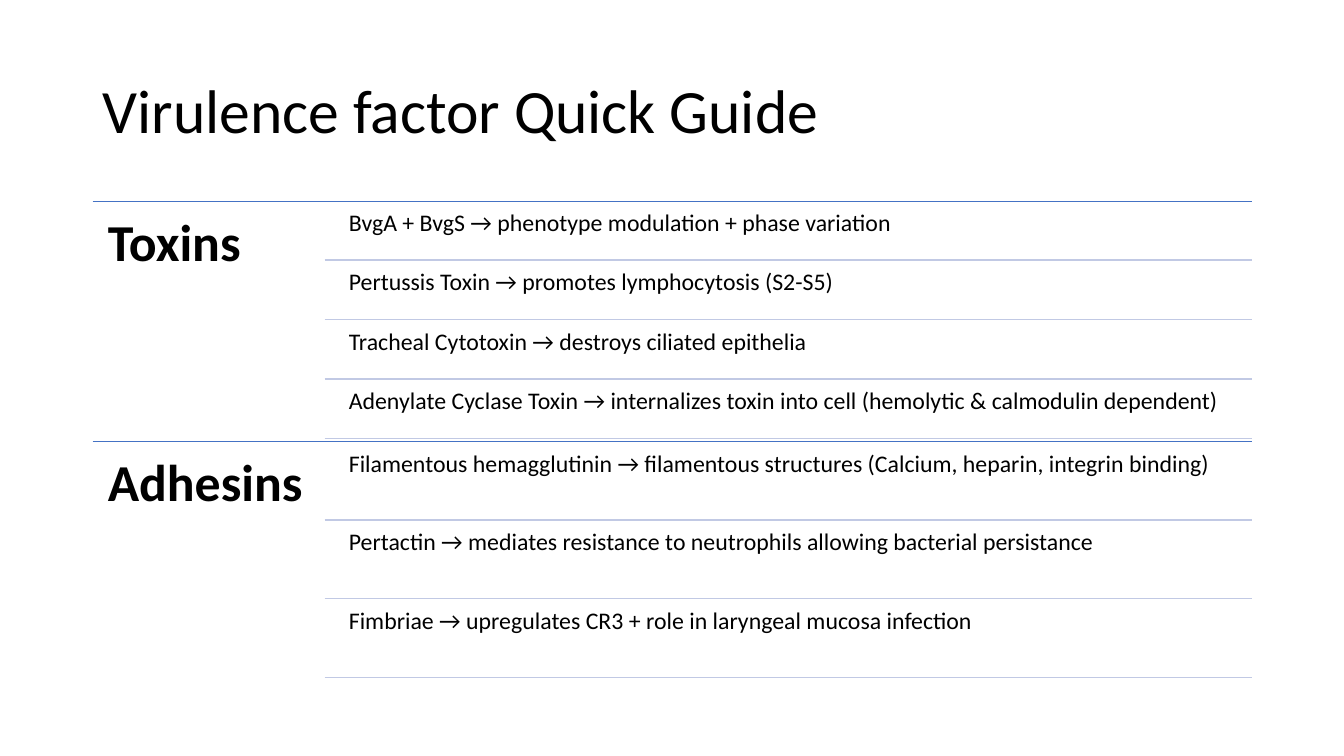
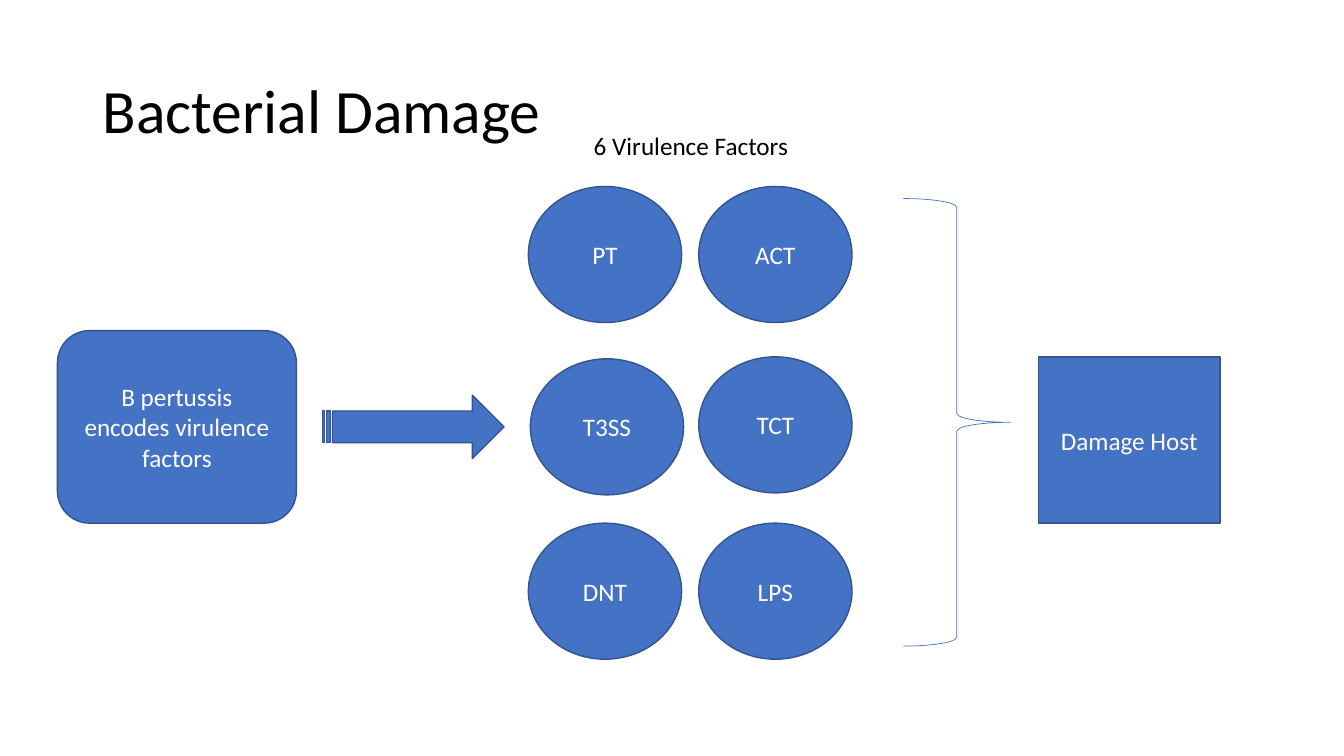
"""Build two slides on the virulence factors of B pertussis."""
from lxml.etree import SubElement
from pptx import Presentation
from pptx.dml.color import RGBColor
from pptx.enum.shapes import MSO_CONNECTOR, MSO_SHAPE as Kind
from pptx.enum.text import MSO_ANCHOR as Anchor, PP_ALIGN as Align
from pptx.oxml.ns import qn
from pptx.util import Inches, Pt

FONT = "Calibri"
BLACK, WHITE = "000000", "FFFFFF"
BLUE, EDGE, PALE = "4472C4", "325491", "C1C9E4"
LEFT, RIGHT = 0.92, 12.42
tint = RGBColor.from_string


def write(shape, text, size, color=BLACK, bold=False, inset=None,
          anchor=Anchor.TOP, align=Align.LEFT, spacing=0.9):
    frame = shape.text_frame
    frame.word_wrap = True
    frame.vertical_anchor = anchor
    if inset is not None:
        frame.margin_left = frame.margin_right = Inches(inset)
        frame.margin_top = frame.margin_bottom = Inches(inset)
    frame.text = text
    para = frame.paragraphs[0]
    para.alignment = align
    para.line_spacing = spacing
    font = para.runs[0].font
    font.name, font.size, font.bold = FONT, Pt(size), bold
    font.color.rgb = tint(color)


def place(slide, box, kind=None):
    spot = [Inches(n) for n in box]
    if kind is None:
        return slide.shapes.add_textbox(*spot)
    shape = slide.shapes.add_shape(kind, *spot)
    shape.shadow.inherit = False
    return shape


deck = Presentation()
deck.slide_width, deck.slide_height = Inches(13.33), Inches(7.5)

slides = []
for title in ["Virulence factor Quick Guide", "Bacterial Damage"]:
    slide = deck.slides.add_slide(deck.slide_layouts[6])
    write(place(slide, (LEFT, 0.4, 11.5, 1.45)), title, 44, anchor=Anchor.MIDDLE)
    slides.append(slide)
guide, damage = slides

groups = [
    ("Toxins", 2, 2.02, 0.56, [
        "BvgA + BvgS → phenotype modulation + phase variation",
        "Pertussis Toxin → promotes lymphocytosis (S2-S5)",
        "Tracheal Cytotoxin → destroys ciliated epithelia",
        "Adenylate Cyclase Toxin → internalizes toxin into cell (hemolytic & calmodulin dependent)",
    ]),
    ("Adhesins", 4.38, 4.41, 0.75, [
        "Filamentous hemagglutinin → filamentous structures (Calcium, heparin, integrin binding)",
        "Pertactin → mediates resistance to neutrophils allowing bacterial persistance",
        "Fimbriae → upregulates CR3 + role in laryngeal mucosa infection",
    ]),
]
rules = []
for name, top, first, high, facts in groups:
    rules.append((LEFT, top, BLUE, 0.5))
    write(place(guide, (LEFT, top, 2.3, 2.38)), name, 37, bold=True, inset=0.15)
    for row, fact in enumerate(facts):
        y = first + row * (high + 0.03)
        write(place(guide, (3.39, y, 9.03, high)), fact, 17, inset=0.07)
        rules.append((3.22, y + high, PALE, 1))

for x, y, color, width in rules:
    rule = guide.shapes.add_connector(
        MSO_CONNECTOR.STRAIGHT, Inches(x), Inches(y), Inches(RIGHT), Inches(y))
    rule.line.color.rgb = tint(color)
    rule.line.width = Pt(width)
    SubElement(rule.element.spPr, qn("a:effectLst"))

parts = [
    (Kind.ROUNDED_RECTANGLE, (0.57, 3.28, 2.37, 1.91), "B pertussis encodes virulence factors"),
    (Kind.STRIPED_RIGHT_ARROW, (3.2, 3.92, 1.8, 0.63), ""),
    (Kind.RECTANGLE, (10.3, 3.54, 1.8, 1.65), "Damage Host"),
]
factors = [
    (5.24, 1.85, "PT"), (6.93, 1.85, "ACT"),
    (5.26, 3.56, "T3SS"), (6.93, 3.54, "TCT"),
    (5.24, 5.19, "DNT"), (6.93, 5.19, "LPS"),
]
parts += [(Kind.OVAL, (x, y, 1.52, 1.35), name) for x, y, name in factors]
for kind, box, text in parts:
    part = place(damage, box, kind)
    part.fill.solid()
    part.fill.fore_color.rgb = tint(BLUE)
    part.line.color.rgb = tint(EDGE)
    part.line.width = Pt(1)
    if text:
        write(part, text, 18, WHITE, anchor=Anchor.MIDDLE, align=Align.CENTER, spacing=1.0)

brace = place(damage, (8.96, 1.97, 1.06, 4.44), Kind.RIGHT_BRACE)
brace.fill.background()
brace.line.color.rgb = tint(BLUE)
brace.line.width = Pt(0.5)
write(place(damage, (5.79, 1.24, 2.28, 0.4)), "6 Virulence Factors", 18, spacing=1.0)

deck.save("out.pptx")
